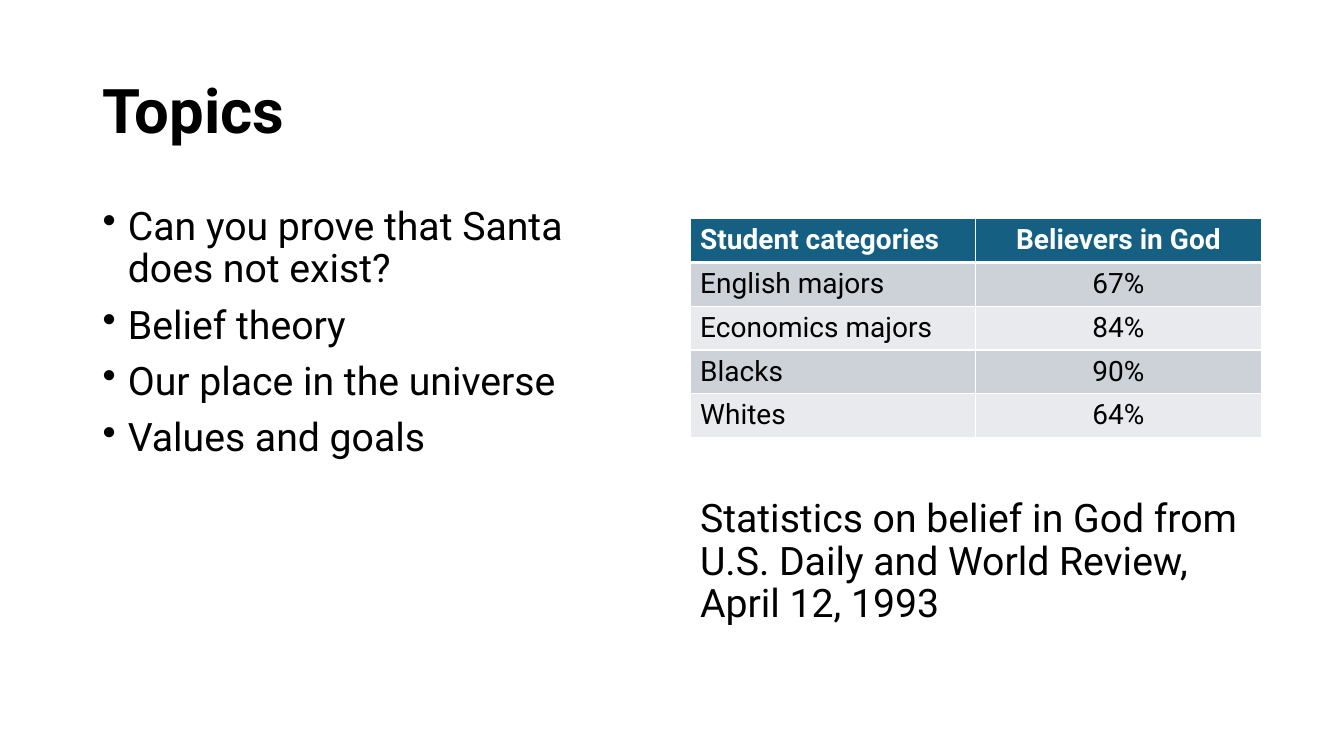
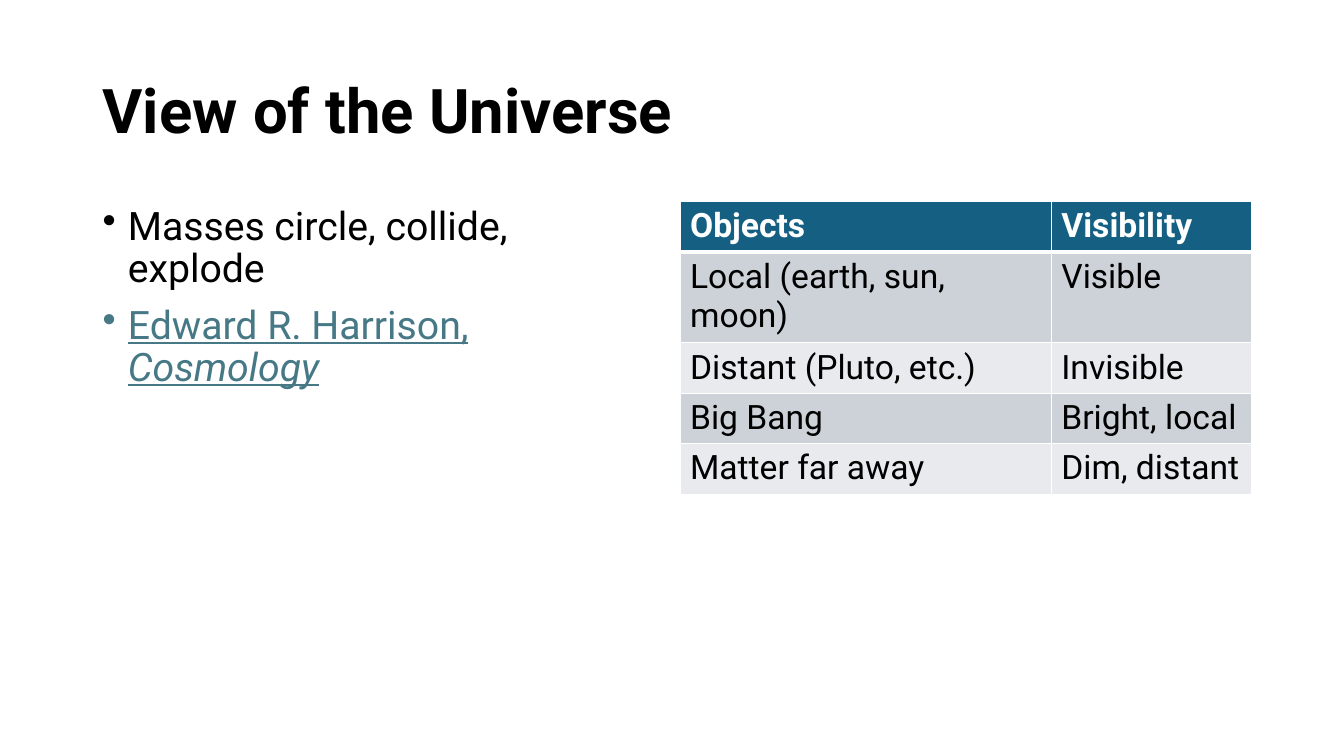
from dataclasses import dataclass
from lxml import etree
from pptx import Presentation
from pptx.dml.color import RGBColor
from pptx.enum.text import MSO_ANCHOR, PP_ALIGN
from pptx.oxml.ns import qn
from pptx.util import Inches, Pt

MIDDLE, TOP = MSO_ANCHOR.MIDDLE, MSO_ANCHOR.TOP
LEFT, CENTER = PP_ALIGN.LEFT, PP_ALIGN.CENTER


@dataclass(frozen=True)
class Theme:
    face: str = "Roboto"
    ink: str = "000000"
    paper: str = "FFFFFF"
    accent: str = "156082"
    link: str = "467886"
    bands: tuple = ("CCD2D8", "E8EAED")
    title: int = 44
    body: int = 28
    rule: int = 1
    thick: int = 3


THEME = Theme()

# Page grid in inches: two equal columns inside the margins
WIDE, HIGH = 13.33, 7.5
EDGE, GAP, PAD = 0.92, 0.16, 0.1
SPAN = WIDE - 2 * EDGE
HALF = (SPAN - GAP) / 2
RIGHT = EDGE + HALF + GAP
HEAD, BODY = 0.4, 2


def style(para, size, color=THEME.ink, bold=False):
    font = para.font
    font.name, font.size, font.bold = THEME.face, Pt(size), bold
    font.color.rgb = RGBColor.from_string(color)


def dot(para):
    """Give a paragraph a round bullet and a hanging indent."""
    props = para._p.get_or_add_pPr()
    props.set("marL", str(Inches(0.25)))
    props.set("indent", str(-Inches(0.25)))
    etree.SubElement(props, qn("a:buChar")).set("char", "•")


def add_text(slide, box, items, size=THEME.body, bold=False,
             before=10, anchor=TOP, dots=False):
    """Write one paragraph per item; a tuple is a linked source: author, work."""
    frame = slide.shapes.add_textbox(*map(Inches, box)).text_frame
    frame.word_wrap, frame.vertical_anchor = True, anchor
    for i, item in enumerate(items):
        para = frame.paragraphs[0] if i == 0 else frame.add_paragraph()
        if dots:
            dot(para)
        para.line_spacing, para.space_before = 0.9, Pt(before)
        if isinstance(item, tuple):
            author, work = item
            para.add_run().text = author
            run = para.add_run()
            run.text, run.font.italic = work, True
            style(para, size, THEME.link)
            para.font.underline = True
        else:
            para.text = item
            style(para, size, bold=bold)


def edge(cell, row):
    """Draw the white cell rules, thick below the header row."""
    props = cell._tc.get_or_add_tcPr()
    thick = {0: "B", 1: "T"}.get(row)
    for side in "LRTB":
        width = THEME.thick if side == thick else THEME.rule
        line = etree.SubElement(props, qn(f"a:ln{side}"), w=str(Pt(width)))
        fill = etree.SubElement(line, qn("a:solidFill"))
        etree.SubElement(fill, qn("a:srgbClr"), val=THEME.paper)


def add_grid(slide, left, top, rows, shares, step, size, aligns):
    """Add a banded table; shares split the column width, step is the row height."""
    spot = map(Inches, (left, top, HALF, step * len(rows)))
    table = slide.shapes.add_table(len(rows), len(shares), *spot).table
    for col, share in zip(table.columns, shares):
        col.width = Inches(HALF * share)
    for r, row in enumerate(rows):
        first = r == 0
        fill = THEME.accent if first else THEME.bands[(r - 1) % 2]
        for c, text in enumerate(row):
            cell = table.cell(r, c)
            edge(cell, r)
            cell.fill.solid()
            cell.fill.fore_color.rgb = RGBColor.from_string(fill)
            cell.text = text
            para = cell.text_frame.paragraphs[0]
            para.alignment = aligns[c]
            style(para, size, THEME.paper if first else THEME.ink, first)


def add_page(deck, title, points):
    """Start a slide with its title and the bullets of the left column."""
    slide = deck.slides.add_slide(deck.slide_layouts[6])
    add_text(slide, (EDGE, HEAD, SPAN, 1.45), [title], THEME.title,
             bold=True, before=0, anchor=MIDDLE)
    add_text(slide, (EDGE, BODY, HALF, 4.76), points, dots=True)
    return slide


def main():
    deck = Presentation()
    deck.slide_width, deck.slide_height = Inches(WIDE), Inches(HIGH)

    topics = add_page(deck, "Topics", [
        "Can you prove that Santa does not exist?",
        "Belief theory",
        "Our place in the universe",
        "Values and goals",
    ])
    add_grid(topics, RIGHT + PAD, 2.17, [
        ("Student categories", "Believers in God"),
        ("English majors", "67%"),
        ("Economics majors", "84%"),
        ("Blacks", "90%"),
        ("Whites", "64%"),
    ], (0.5, 0.5), 0.43, 20, (LEFT, CENTER))
    add_text(topics, (RIGHT + PAD, 4.9, HALF - PAD, 1.68), [
        "Statistics on belief in God from U.S. Daily and World Review, "
        "April 12, 1993",
    ])

    view = add_page(deck, "View of the Universe", [
        "Masses circle, collide, explode",
        ("Edward R. Harrison, ", "Cosmology"),
    ])
    add_grid(view, RIGHT, BODY, [
        ("Objects", "Visibility"),
        ("Local (earth, sun, moon)", "Visible"),
        ("Distant (Pluto, etc.)", "Invisible"),
        ("Big Bang", "Bright, local"),
        ("Matter far away", "Dim, distant"),
    ], (0.65, 0.35), 0.49, 24, (LEFT, LEFT))

    deck.save("out.pptx")


if __name__ == "__main__":
    main()
